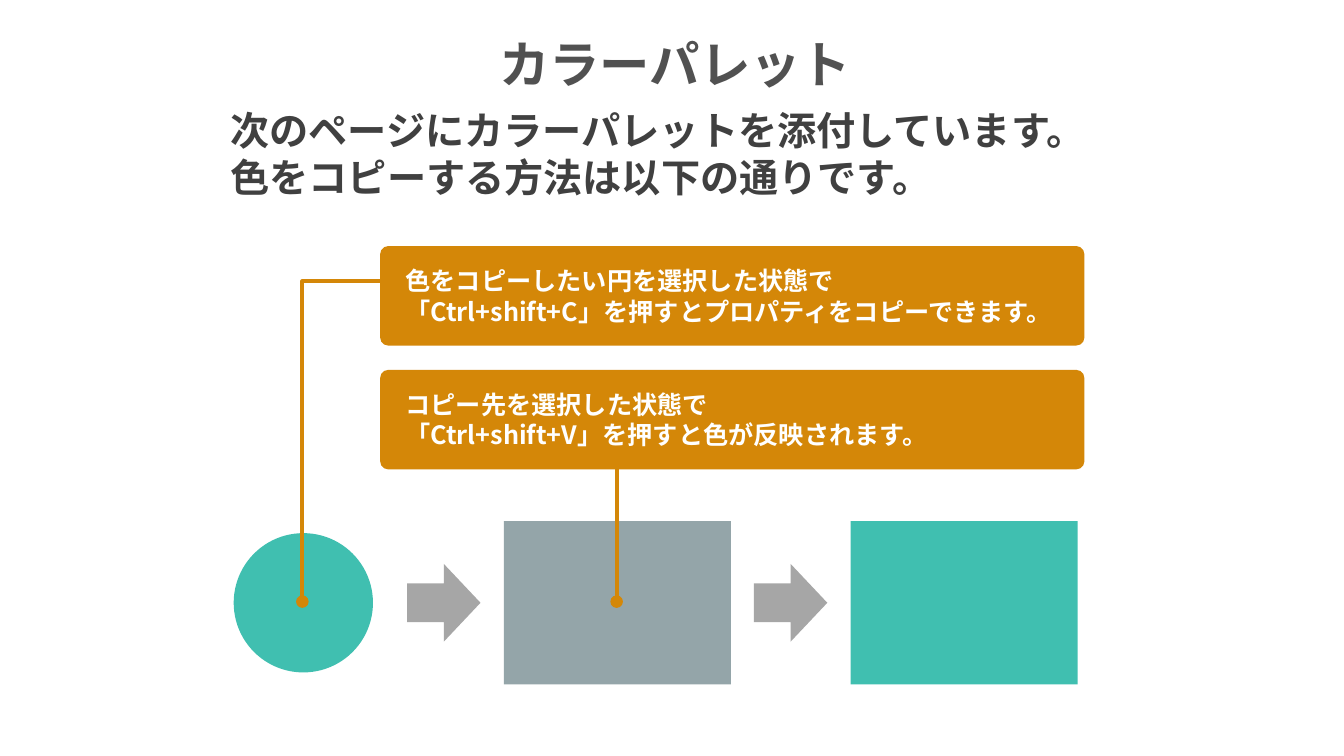
from lxml import etree
from pptx import Presentation
from pptx.dml.color import RGBColor
from pptx.enum.shapes import MSO_CONNECTOR, MSO_SHAPE
from pptx.enum.text import MSO_ANCHOR, MSO_AUTO_SIZE, PP_ALIGN
from pptx.oxml.ns import qn
from pptx.util import Cm, Pt

OVAL, RECTANGLE = MSO_SHAPE.OVAL, MSO_SHAPE.RECTANGLE
ROUNDED, ARROW = MSO_SHAPE.ROUNDED_RECTANGLE, MSO_SHAPE.RIGHT_ARROW
LEFT, CENTER = PP_ALIGN.LEFT, PP_ALIGN.CENTER
TOP, MIDDLE = MSO_ANCHOR.TOP, MSO_ANCHOR.MIDDLE
NO_FIT = MSO_AUTO_SIZE.NONE
STRAIGHT = MSO_CONNECTOR.STRAIGHT

# Content
TITLE = ["カラーパレット"]
INTRO = [
    "次のページにカラーパレットを添付しています。",
    "色をコピーする方法は以下の通りです。",
]
CALLOUTS = [
    ["色をコピーしたい円を選択した状態で",
     "「Ctrl+shift+C」を押すとプロパティをコピーできます。"],
    ["コピー先を選択した状態で",
     "「Ctrl+shift+V」を押すと色が反映されます。"],
]
FONT = "Noto Sans CJK JP"
COLORS = {
    "title": "515151", "intro": "404040", "white": "FFFFFF",
    "teal": "40BFB0", "slate": "94A5A9", "arrow": "A6A6A6", "callout": "D48708",
}

# Layout in centimetres
FLOW_MIDDLE = 15.19
FLOW_STEP = 8.74
SWATCH_LEFT, SWATCH_SIZE = 12.7, (5.72, 4.11)
ARROW_LEFT, ARROW_SIZE = 10.26, (1.85, 1.96)
CIRCLE_LEFT, CIRCLE_SIZE = 5.89, (3.51, 3.51)
CALLOUT_LEFT, CALLOUT_TOP, CALLOUT_STEP = 9.58, 6.2, 3.12
CALLOUT_SIZE = (17.75, 2.51)
LEADER_END = 15.16


def write_lines(shape, lines, size, color, align=LEFT, anchor=TOP,
                spacing=1.0, left=0.25, right=0.1):
    frame = shape.text_frame
    frame_format = {
        "word_wrap": True, "auto_size": NO_FIT, "vertical_anchor": anchor,
        "margin_left": Cm(left), "margin_right": Cm(right),
        "margin_top": Cm(0.13), "margin_bottom": Cm(0.13),
    }
    for name, value in frame_format.items():
        setattr(frame, name, value)
    for index, line in enumerate(lines):
        para = frame.add_paragraph() if index else frame.paragraphs[0]
        para.alignment = align
        para.line_spacing = spacing
        para.space_before = Pt(0)
        span = para.add_run()
        span.text = line
        for name, value in {"name": FONT, "size": Pt(size), "bold": True}.items():
            setattr(span.font, name, value)
        span.font.color.rgb = RGBColor.from_string(COLORS[color])
        etree.SubElement(span.font._element, qn("a:ea"), typeface=FONT)


def place(shape, left, top, width, height):
    box = {"left": left, "top": top, "width": width, "height": height}
    for name, value in box.items():
        setattr(shape, name, Cm(value))


def add_block(page, kind, left, top, size, color):
    shape = page.shapes.add_shape(kind, Cm(left), Cm(top), *map(Cm, size))
    shape.shadow.inherit = False
    shape.fill.solid()
    shape.fill.fore_color.rgb = RGBColor.from_string(COLORS[color])
    shape.line.fill.background()
    return shape


def add_flow_part(page, kind, left, size, color):
    add_block(page, kind, left, FLOW_MIDDLE - size[1] / 2, size, color)


def style_leader(leader):
    leader.line.color.rgb = RGBColor.from_string(COLORS["callout"])
    leader.line.width = Pt(3)
    etree.SubElement(leader.line._get_or_add_ln(), qn("a:tailEnd"), type="oval")
    etree.SubElement(leader._element.spPr, qn("a:effectLst"))


def main():
    deck = Presentation()
    deck.slide_width, deck.slide_height = Cm(33.87), Cm(19.05)
    page = deck.slides.add_slide(deck.slide_layouts[0])

    # Title and introduction
    title, intro = page.placeholders
    place(title, 1.09, 0.66, 31.7, 1.88)
    write_lines(title, TITLE, 36, "title", CENTER, MIDDLE)
    place(intro, 5.05, 2.54, 23.77, 3.12)
    write_lines(intro, INTRO, 28, "intro", left=0.76)

    # Colour flow
    add_flow_part(page, OVAL, CIRCLE_LEFT, CIRCLE_SIZE, "teal")
    for step, color in enumerate(["slate", "teal"]):
        shift = step * FLOW_STEP
        add_flow_part(page, RECTANGLE, SWATCH_LEFT + shift, SWATCH_SIZE, color)
        add_flow_part(page, ARROW, ARROW_LEFT + shift, ARROW_SIZE, "arrow")

    # Callouts
    for index, lines in enumerate(CALLOUTS):
        top = CALLOUT_TOP + index * CALLOUT_STEP
        callout = add_block(page, ROUNDED, CALLOUT_LEFT, top, CALLOUT_SIZE, "callout")
        callout.adjustments[0] = 0.083
        write_lines(callout, lines, 18, "white", anchor=MIDDLE, left=0.58)

    # Leader from the first callout to the circle
    builder = page.shapes.build_freeform(Cm(9.65), Cm(7.09))
    corners = [(Cm(7.62), Cm(7.09)), (Cm(7.62), Cm(LEADER_END))]
    builder.add_line_segments(corners, close=False)
    elbow = builder.convert_to_shape()
    elbow.fill.background()
    style_leader(elbow)

    # Leader from the second callout to the grey swatch
    callout_bottom = CALLOUT_TOP + CALLOUT_STEP + CALLOUT_SIZE[1]
    drop = page.shapes.add_connector(
        STRAIGHT, Cm(15.54), Cm(callout_bottom), Cm(15.54), Cm(LEADER_END))
    style_leader(drop)

    deck.save("out.pptx")


if __name__ == "__main__":
    main()
